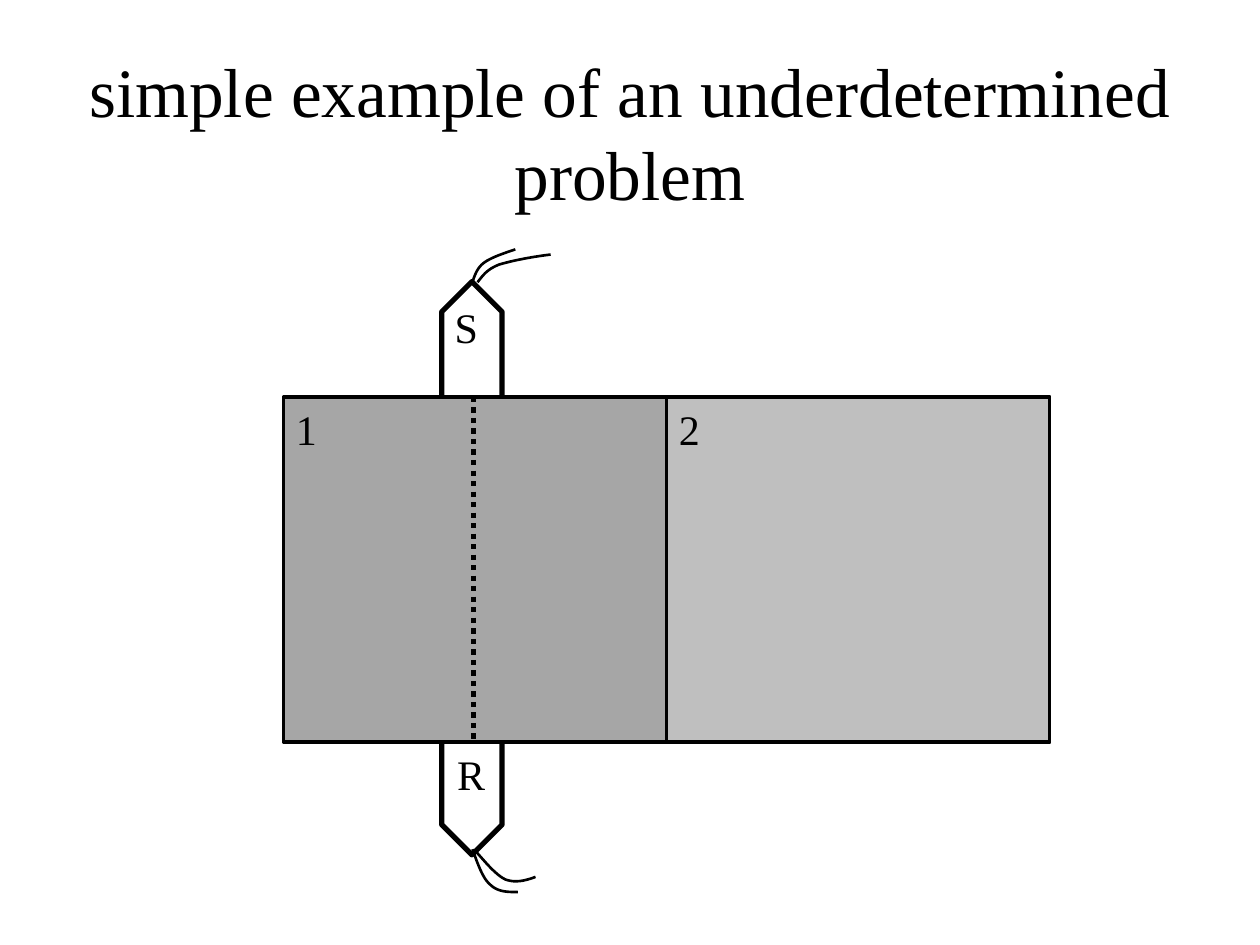
from dataclasses import dataclass

import pptx
import pptx.util
import pptx.dml.color
import pptx.enum.dml
import pptx.enum.shapes
import pptx.enum.text
import pptx.oxml.ns
from lxml import etree

Inches = pptx.util.Inches
Pt = pptx.util.Pt
SHAPE = pptx.enum.shapes.MSO_SHAPE
FONT = "Times New Roman"
BLACK = "000000"
BOX_LEFT, BOX_TOP, CELL_W, BOX_H = 2.25, 3.15, 3.04, 2.74
BOX_BOTTOM = BOX_TOP + BOX_H
RAY_X = 3.76
STEPS = 12


@dataclass
class Box:
    left: float
    top: float
    width: float
    height: float
    fill: str | None = None
    weight: float = 2
    shape: int = SHAPE.RECTANGLE
    rotation: float = 0


@dataclass
class Label:
    text: str
    left: float
    top: float


@dataclass
class Wire:
    points: list[tuple[float, float]]


TRANSDUCERS = [
    Box(3.26, 6.06, 0.97, 0.48, None, 3, SHAPE.PENTAGON, 90),
    Box(3.26, 2.48, 0.97, 0.48, None, 3, SHAPE.PENTAGON, 270),
]
CELLS = [
    Box(BOX_LEFT, BOX_TOP, 2 * CELL_W, BOX_H, "A6A6A6"),
    Box(BOX_LEFT + CELL_W, BOX_TOP, CELL_W, BOX_H, "BFBFBF"),
]
RECEIVER = Label("R", 3.53, BOX_BOTTOM)
LABELS = [
    Label("S", 3.51, 2.34),
    Label("2", BOX_LEFT + CELL_W, BOX_TOP),
    Label("1", BOX_LEFT, BOX_TOP),
]
WIRES = [
    Wire([(3.75, 2.24), (3.77, 2.18), (3.79, 2.12), (3.85, 2.08),
          (3.91, 2.04), (4, 2.01), (4.09, 1.98)]),
    Wire([(3.79, 2.24), (3.83, 2.19), (3.86, 2.14), (3.96, 2.1),
          (4.06, 2.07), (4.21, 2.04), (4.37, 2.02)]),
    Wire([(3.75, 6.74), (3.79, 6.85), (3.83, 6.97), (3.89, 7.02),
          (3.95, 7.08), (4.03, 7.08), (4.11, 7.08)]),
    Wire([(3.77, 6.75), (3.85, 6.84), (3.93, 6.94), (4.01, 6.98),
          (4.09, 7.01), (4.17, 6.99), (4.25, 6.96)]),
]


def rgb(color: str) -> pptx.dml.color.RGBColor:
    return pptx.dml.color.RGBColor.from_string(color)


def set_line(sp, weight: float) -> None:
    sp.line.color.rgb = rgb(BLACK)
    sp.line.width = Pt(weight)


def set_text(tf, text: str, size: float) -> None:
    tf.text = text
    r = tf.paragraphs[0].runs[0]
    r.font.name = FONT
    r.font.size = Pt(size)
    r.font.color.rgb = rgb(BLACK)


def add_box(s, box: Box) -> None:
    sp = s.shapes.add_shape(box.shape, Inches(box.left), Inches(box.top),
                            Inches(box.width), Inches(box.height))
    sp.rotation = box.rotation
    sp.shadow.inherit = False
    if box.fill:
        sp.fill.solid()
        sp.fill.fore_color.rgb = rgb(box.fill)
    else:
        sp.fill.background()
    set_line(sp, box.weight)


def add_label(s, label: Label) -> None:
    sp = s.shapes.add_textbox(Inches(label.left), Inches(label.top), Inches(0.8), Inches(0.5))
    tf = sp.text_frame
    tf.word_wrap = True
    tf.auto_size = pptx.enum.text.MSO_AUTO_SIZE.SHAPE_TO_FIT_TEXT
    set_text(tf, label.text, 24)


def add_ray(s) -> None:
    sp = s.shapes.add_connector(pptx.enum.shapes.MSO_CONNECTOR.STRAIGHT,
                                Inches(RAY_X), Inches(BOX_TOP),
                                Inches(RAY_X), Inches(BOX_BOTTOM))
    set_line(sp, 3)
    sp.line.dash_style = pptx.enum.dml.MSO_LINE.ROUND_DOT
    etree.SubElement(sp._element.spPr, pptx.oxml.ns.qn("a:effectLst"))


def bezier(controls: list[tuple[float, float]], t: float) -> tuple[int, int]:
    weights = ((1 - t) ** 3, 3 * t * (1 - t) ** 2, 3 * t ** 2 * (1 - t), t ** 3)
    x, y = (sum(w * c for w, c in zip(weights, axis)) for axis in zip(*controls))
    return Inches(x), Inches(y)


def add_wire(s, wire: Wire) -> None:
    curve = [bezier(wire.points[i:i + 4], step / STEPS)
             for i in (0, 3) for step in range(1, STEPS + 1)]
    builder = s.shapes.build_freeform(*bezier(wire.points[:4], 0))
    builder.add_line_segments(curve, close=False)
    sp = builder.convert_to_shape()
    sp.shadow.inherit = False
    sp.fill.background()
    set_line(sp, 1.5)


def add_title(s) -> None:
    sp = s.shapes.title
    sp.left, sp.top, sp.width, sp.height = Inches(0), Inches(0.42), Inches(10), Inches(1.25)
    tf = sp.text_frame
    tf.word_wrap = True
    tf.vertical_anchor = pptx.enum.text.MSO_ANCHOR.MIDDLE
    set_text(tf, "simple example of an underdetermined problem", 39.6)
    tf.paragraphs[0].alignment = pptx.enum.text.PP_ALIGN.CENTER


def main() -> None:
    prs = pptx.Presentation()
    prs.slide_width, prs.slide_height = Inches(10), Inches(7.5)
    s = prs.slides.add_slide(prs.slide_layouts[5])
    add_title(s)
    for box in TRANSDUCERS:
        add_box(s, box)
    add_label(s, RECEIVER)
    for box in CELLS:
        add_box(s, box)
    add_ray(s)
    for label in LABELS:
        add_label(s, label)
    for wire in WIRES:
        add_wire(s, wire)
    prs.save("out.pptx")


if __name__ == "__main__":
    main()
